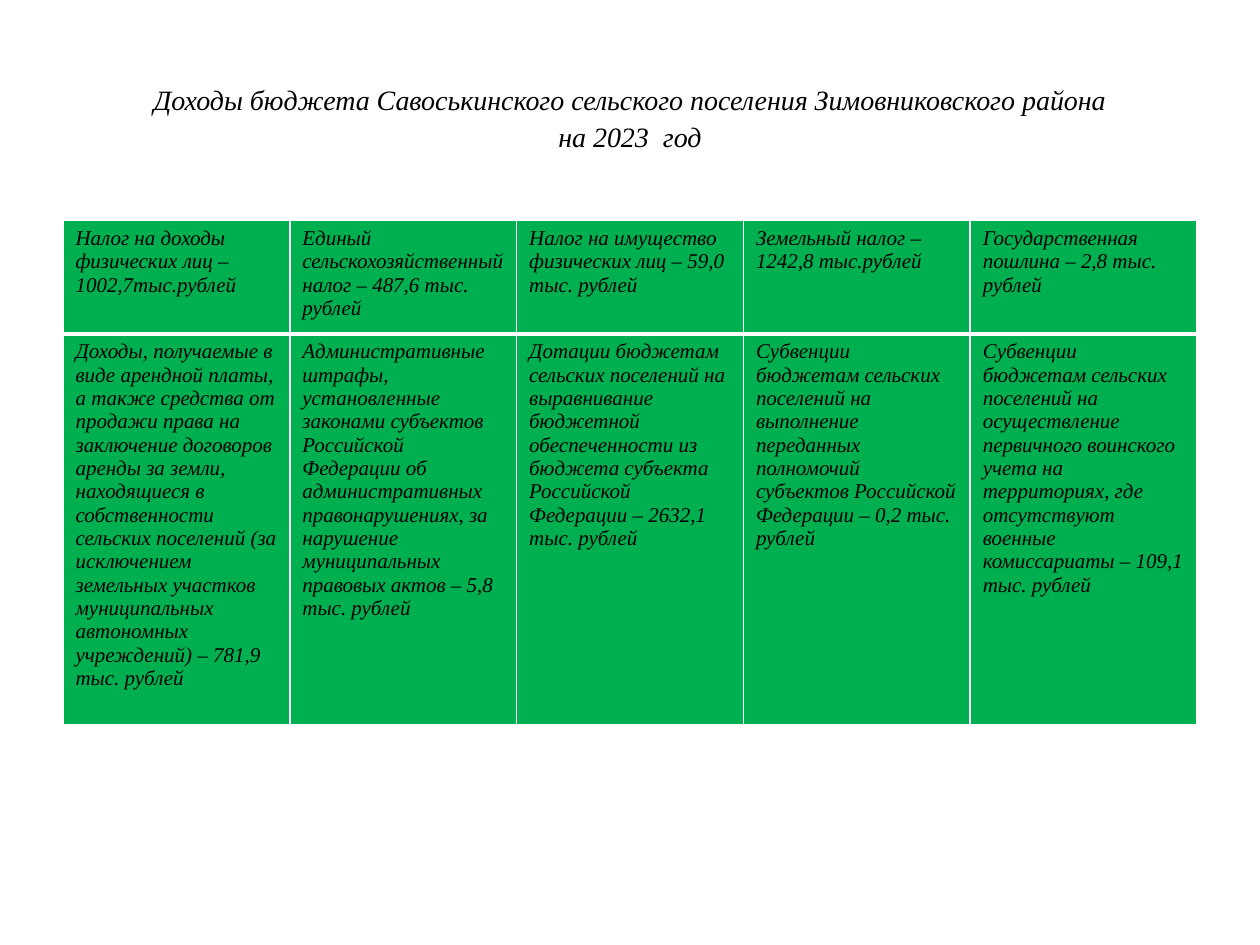
from pptx import Presentation
from pptx.dml.color import RGBColor
from pptx.enum.text import MSO_ANCHOR, PP_ALIGN
from pptx.oxml import parse_xml
from pptx.oxml.ns import nsdecls
from pptx.util import Inches, Pt

BLACK = RGBColor(0x00, 0x00, 0x00)
WHITE = RGBColor(0xFF, 0xFF, 0xFF)
GREEN = RGBColor(0x00, 0xB0, 0x50)
CENTER = PP_ALIGN.CENTER
MIDDLE = MSO_ANCHOR.MIDDLE

TITLE = [
    "Доходы бюджета Савоськинского сельского поселения Зимовниковского района",
    "на 2023  год",
]
INCOME = [
    [
        "Налог на доходы физических лиц – 1002,7тыс.рублей",
        "Единый сельскохозяйственный налог – 487,6 тыс. рублей",
        "Налог на имущество физических лиц – 59,0 тыс. рублей",
        "Земельный налог – 1242,8 тыс.рублей",
        "Государственная пошлина – 2,8 тыс. рублей",
    ],
    [
        "Доходы, получаемые в виде арендной платы, а также средства от продажи права "
        "на заключение договоров аренды за земли, находящиеся в собственности сельских "
        "поселений (за исключением земельных участков муниципальных автономных "
        "учреждений) – 781,9 тыс. рублей",
        "Административные штрафы, установленные законами субъектов Российской Федерации "
        "об административных правонарушениях, за нарушение муниципальных правовых "
        "актов – 5,8 тыс. рублей",
        "Дотации бюджетам сельских поселений на выравнивание бюджетной обеспеченности "
        "из бюджета субъекта Российской Федерации – 2632,1 тыс. рублей",
        "Субвенции бюджетам сельских поселений на выполнение переданных полномочий "
        "субъектов Российской Федерации – 0,2 тыс. рублей",
        "Субвенции бюджетам сельских поселений на осуществление первичного воинского "
        "учета на территориях, где отсутствуют военные комиссариаты – 109,1 тыс. рублей",
    ],
]


class SlideBuilder:
    font = "Times New Roman"
    thin, thick = 1, 3

    def __init__(self, deck):
        self.width, self.height = deck.slide_width, deck.slide_height
        self.page = deck.slides.add_slide(deck.slide_layouts[6])

    def area(self, left, top, width, height):
        return (int(left * self.width), int(top * self.height),
                int(width * self.width), int(height * self.height))

    def add_text(self, para, text, size):
        span = para.add_run()
        span.text = text
        span.font.name = self.font
        span.font.size = Pt(size)
        span.font.italic = True
        span.font.color.rgb = BLACK

    def title(self, lines, area, size):
        frame = self.page.shapes.add_textbox(*self.area(*area)).text_frame
        frame.word_wrap = True
        frame.vertical_anchor = MIDDLE
        para = frame.paragraphs[0]
        para.alignment = CENTER
        para.line_spacing = 1.1
        for number, line in enumerate(lines):
            if number:
                para.add_line_break()
            self.add_text(para, line, size)

    def border(self, cell, widths):
        properties = cell._tc.get_or_add_tcPr()
        for position, (side, width) in enumerate(widths.items()):
            properties.insert(position, parse_xml(
                f'<a:ln{side} {nsdecls("a")} w="{Pt(width)}"><a:solidFill>'
                f'<a:srgbClr val="{WHITE}"/></a:solidFill></a:ln{side}>'))

    def table(self, rows, area, size):
        grid = self.page.shapes.add_table(len(rows), len(rows[0]), *self.area(*area)).table
        grid.first_row = False
        grid.horz_banding = False
        for row, texts in enumerate(rows):
            top = self.thick if row == 1 else self.thin
            bottom = self.thick if row == 0 else self.thin
            for column, text in enumerate(texts):
                cell = grid.cell(row, column)
                cell.fill.solid()
                cell.fill.fore_color.rgb = GREEN
                self.border(cell, {"L": self.thin, "R": self.thin, "T": top, "B": bottom})
                self.add_text(cell.text_frame.paragraphs[0], text, size)


def main():
    deck = Presentation()
    deck.slide_width, deck.slide_height = Inches(10), Inches(7.5)
    builder = SlideBuilder(deck)
    builder.title(TITLE, (0.05, 0.04, 0.9, 1 / 6), 16)
    builder.table(INCOME, (0.05, 7 / 30, 0.9, 0.11), 12)
    deck.save("out.pptx")


if __name__ == "__main__":
    main()
